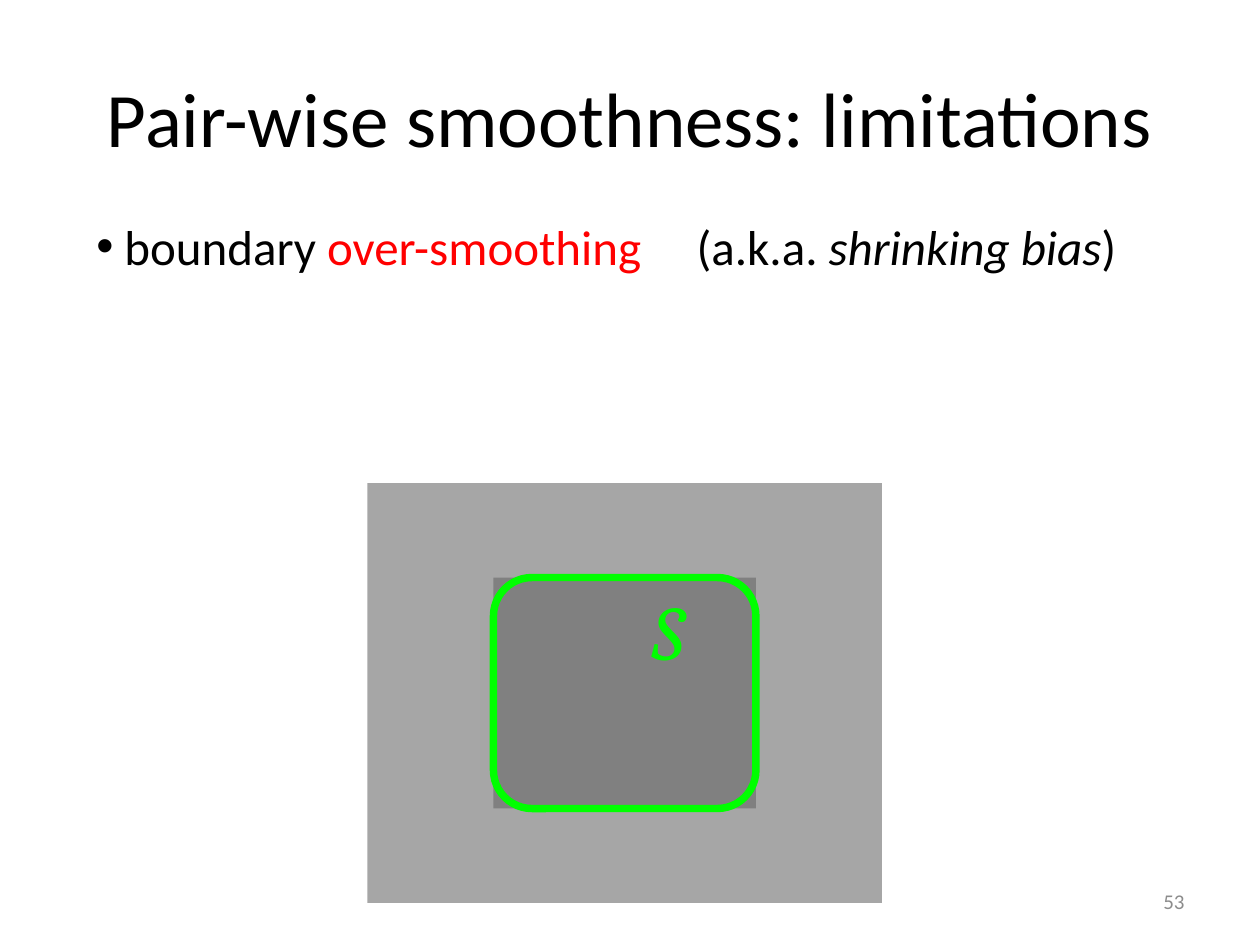
from pptx import Presentation
from pptx.dml.color import RGBColor
from pptx.enum.shapes import MSO_SHAPE
from pptx.enum.text import MSO_ANCHOR, PP_ALIGN
from pptx.oxml.ns import qn
from pptx.util import Pt
from lxml import etree

RECTANGLE, ROUNDED = MSO_SHAPE.RECTANGLE, MSO_SHAPE.ROUNDED_RECTANGLE
TOP, MIDDLE = MSO_ANCHOR.TOP, MSO_ANCHOR.MIDDLE
LEFT, CENTER, RIGHT = PP_ALIGN.LEFT, PP_ALIGN.CENTER, PP_ALIGN.RIGHT

COLORS = {
    "black": "000000",
    "red": "FF0000",
    "green": "00FF00",
    "background": "A6A6A6",
    "object": "808080",
    "number": "8C8C8C",
}


def color(name):
    return RGBColor.from_string(COLORS[name])


class SlideBuilder:
    """Holds the text style and the page being filled."""

    style = {"name": "Calibri", "size": Pt(28), "italic": False}

    def __init__(self, page):
        self.page = page

    def shape(self, kind, bounds, fill=None, line=None, width=1, parent=None):
        box = (parent or self.page).shapes.add_shape(kind, *map(Pt, bounds))
        box.shadow.inherit = False
        if fill:
            box.fill.solid()
            box.fill.fore_color.rgb = color(fill)
        else:
            box.fill.background()
        if line:
            box.line.color.rgb = color(line)
            box.line.width = Pt(width)
        else:
            box.line.fill.background()
        return box

    def text(self, bounds, spans, align=LEFT, anchor=TOP, wrap=True, parent=None, **base):
        """Add one paragraph; spans are (text, color name, format changes)."""
        box = (parent or self.page).shapes.add_textbox(*map(Pt, bounds))
        frame = box.text_frame
        frame.word_wrap = wrap
        frame.vertical_anchor = anchor
        para = frame.paragraphs[0]
        para.alignment = align
        for words, color_name, changes in spans:
            span = para.add_run()
            span.text = words
            span.font.color.rgb = color(color_name)
            for key, value in {**self.style, **base, **changes}.items():
                setattr(span.font, key, value)
        return para

    def bullet(self, bounds, spans, tab):
        """Add a bulleted paragraph with one tab stop, in points."""
        para = self.text(bounds, spans)
        properties = para._p.get_or_add_pPr()
        properties.set("marL", "0")
        properties.set("indent", "0")
        etree.SubElement(properties, qn("a:buFont"), typeface="Arial")
        etree.SubElement(properties, qn("a:buChar"), char="•")
        tabs = etree.SubElement(properties, qn("a:tabLst"))
        etree.SubElement(tabs, qn("a:tab"), pos=str(Pt(tab)), algn="l")


def main():
    deck = Presentation()
    deck.slide_width, deck.slide_height = Pt(720), Pt(540)
    slide = SlideBuilder(deck.slides.add_slide(deck.slide_layouts[6]))

    object_bounds = (282, 330, 150, 132)
    slide.shape(RECTANGLE, (210, 276, 294, 240), fill="background")
    slide.shape(RECTANGLE, object_bounds, fill="object")

    slide.text((36, 21.6, 648, 90), [("Pair-wise smoothness: limitations", "black", {})],
               align=CENTER, anchor=MIDDLE, size=Pt(44))
    slide.text((516, 500.5, 168, 28.75), [("53", "number", {})],
               align=RIGHT, anchor=MIDDLE, size=Pt(12))
    slide.bullet((48, 120, 605, 41), [
        (" boundary ", "black", {}),
        ("over-smoothing\t", "red", {}),
        ("(a.k.a. ", "black", {}),
        ("shrinking bias", "black", {"italic": True}),
        (")", "black", {}),
    ], tab=343)

    segment = slide.page.shapes.add_group_shape()
    slide.text((366, 330, 36.5, 60.5), [("S", "green", {})], wrap=False, parent=segment,
               name="Cambria", size=Pt(44), italic=True)
    slide.shape(ROUNDED, object_bounds, line="green", width=4.25, parent=segment)

    deck.save("out.pptx")


if __name__ == "__main__":
    main()
